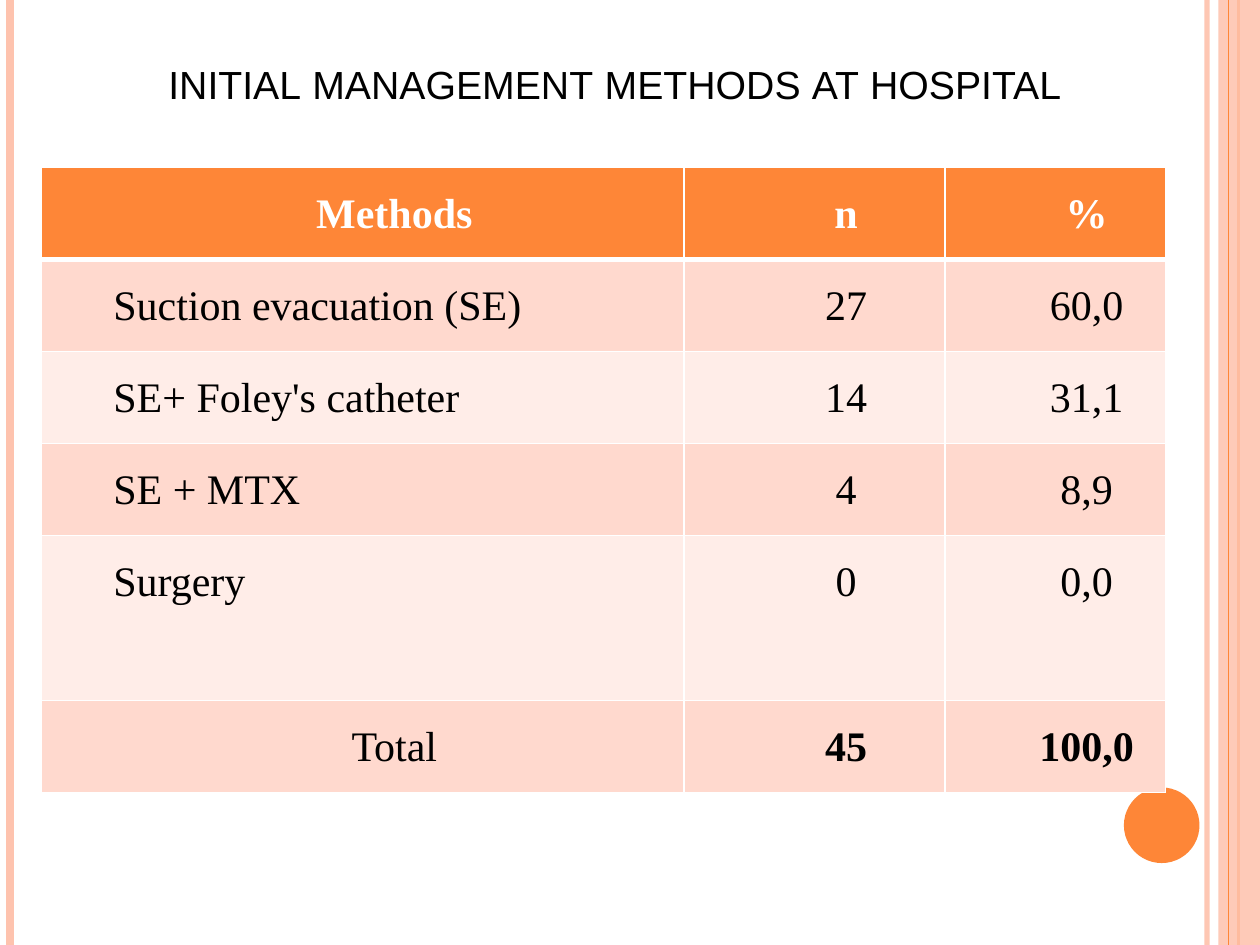
"""Build a slide with a table of initial management methods at hospital."""
import pptx
import pptx.dml.color
import pptx.enum.shapes
import pptx.enum.text
import pptx.oxml
import pptx.oxml.ns
import pptx.util

Inches, Pt = pptx.util.Inches, pptx.util.Pt
SHAPE = pptx.enum.shapes.MSO_SHAPE
ALIGN = pptx.enum.text.PP_ALIGN
ANCHOR = pptx.enum.text.MSO_ANCHOR
NS = pptx.oxml.ns.nsdecls("a")

COLORS = {
    "accent": "FE8637", "pale": "FEC3AE", "odd_row": "FFD9CE",
    "even_row": "FFEDE8", "white": "FFFFFF", "black": "000000",
}
COLS = [5.1, 2.07, 1.75]
ROW_HEIGHTS = [0.73, 0.73, 0.73, 0.73, 1.31, 0.73]
ROWS = [
    ("Methods", "n", "%"),
    ("Suction evacuation (SE)", "27", "60,0"),
    ("SE+ Foley's catheter", "14", "31,1"),
    ("SE + MTX", "4", "8,9"),
    ("Surgery", "0", "0,0"),
    ("Total", "45", "100,0"),
]


def apply(obj, values):
    for name, value in values.items():
        setattr(obj, name, value)


def rgb(name):
    return pptx.dml.color.RGBColor.from_string(COLORS[name])


class SlideBuilder:
    title_font = {"name": "Arial", "size": Pt(28), "bold": False}
    cell_font = {"name": "Times New Roman", "size": Pt(24)}
    cell_format = {"margin_left": Inches(0.07), "margin_right": Inches(0.07),
                   "margin_top": 0, "margin_bottom": 0}

    def __init__(self, prs):
        self.s = prs.slides.add_slide(prs.slide_layouts[5])

    def set_alpha(self, fill_parent, percent):
        clr = next(fill_parent.iter(pptx.oxml.ns.qn("a:srgbClr")))
        clr.append(pptx.oxml.parse_xml(f'<a:alpha {NS} val="{percent * 1000}"/>'))

    def rule(self, x, color, width, alpha=None):
        ln = self.s.shapes.add_connector(
            pptx.enum.shapes.MSO_CONNECTOR.STRAIGHT,
            Inches(x), 0, Inches(x), Inches(7.5))
        ln.line.color.rgb = rgb(color)
        ln.line.width = Pt(width)
        ln._element.spPr.append(pptx.oxml.parse_xml(f"<a:effectLst {NS}/>"))
        if alpha:
            self.set_alpha(ln._element.spPr, alpha)

    def shape(self, kind, box, color, alpha=None):
        sp = self.s.shapes.add_shape(kind, *map(Inches, box))
        sp.shadow.inherit = False
        sp.fill.solid()
        sp.fill.fore_color.rgb = rgb(color)
        sp.line.fill.background()
        if alpha:
            self.set_alpha(sp._element.spPr, alpha)

    def title(self, text, box):
        sp = self.s.shapes.title
        apply(sp, dict(zip(("left", "top", "width", "height"), map(Inches, box))))
        tf = sp.text_frame
        apply(tf, {"word_wrap": True, "vertical_anchor": ANCHOR.BOTTOM})
        p = tf.paragraphs[0]
        p.alignment = ALIGN.CENTER
        r = p.add_run()
        r.text = text
        apply(r.font, self.title_font)
        r.font.color.rgb = rgb("black")
        r.font._element.set("cap", "small")

    def cell(self, cell, text, fill, color, bold, align, bottom):
        apply(cell, self.cell_format)
        tcPr = cell._tc.get_or_add_tcPr()
        for side, width in zip("LRTB", (1, 1, 1, bottom)):
            tcPr.append(pptx.oxml.parse_xml(
                f'<a:ln{side} {NS} w="{Pt(width)}"><a:solidFill>'
                f'<a:srgbClr val="{COLORS["white"]}"/></a:solidFill></a:ln{side}>'))
        cell.fill.solid()
        cell.fill.fore_color.rgb = rgb(fill)
        p = cell.text_frame.paragraphs[0]
        apply(p, {"alignment": align, "line_spacing": 1.5})
        p._p.get_or_add_pPr().set("indent", str(Inches(0.5)))
        r = p.add_run()
        r.text = text
        apply(r.font, self.cell_font)
        apply(r.font, {"bold": bold})
        r.font.color.rgb = rgb(color)

    def table(self, rows, left, top):
        last = len(rows) - 1
        tbl = self.s.shapes.add_table(
            len(rows), len(COLS), Inches(left), Inches(top),
            Inches(sum(COLS)), Inches(sum(ROW_HEIGHTS))).table
        for col, width in zip(tbl.columns, COLS):
            col.width = Inches(width)
        for i, (row, height) in enumerate(zip(rows, ROW_HEIGHTS)):
            tbl.rows[i].height = Inches(height)
            head = i == 0
            fill = "accent" if head else "odd_row" if i % 2 else "even_row"
            for j, text in enumerate(row):
                label = j == 0 and 0 < i < last
                self.cell(tbl.cell(i, j), text, fill,
                          color="white" if head else "black",
                          bold=head or (i == last and j > 0),
                          align=ALIGN.JUSTIFY if label else ALIGN.CENTER,
                          bottom=3 if head else 1)


def main():
    prs = pptx.Presentation()
    apply(prs, {"slide_width": Inches(10), "slide_height": Inches(7.5)})
    b = SlideBuilder(prs)
    b.rule(9.58, "pale", 3, alpha=93)
    b.rule(0.08, "pale", 4.5)
    b.rule(9.83, "accent", 1.5)
    b.shape(SHAPE.RECTANGLE, (9.67, 0, 0.33, 7.5), "pale", alpha=87)
    b.rule(9.75, "accent", 0.75)
    b.shape(SHAPE.OVAL, (8.92, 6.25, 0.6, 0.6), "accent")
    b.title("initial management methods at hospital", (0.42, 0.3, 8.92, 0.62))
    b.table(ROWS, 0.33, 1.33)
    prs.save("out.pptx")


if __name__ == "__main__":
    main()
